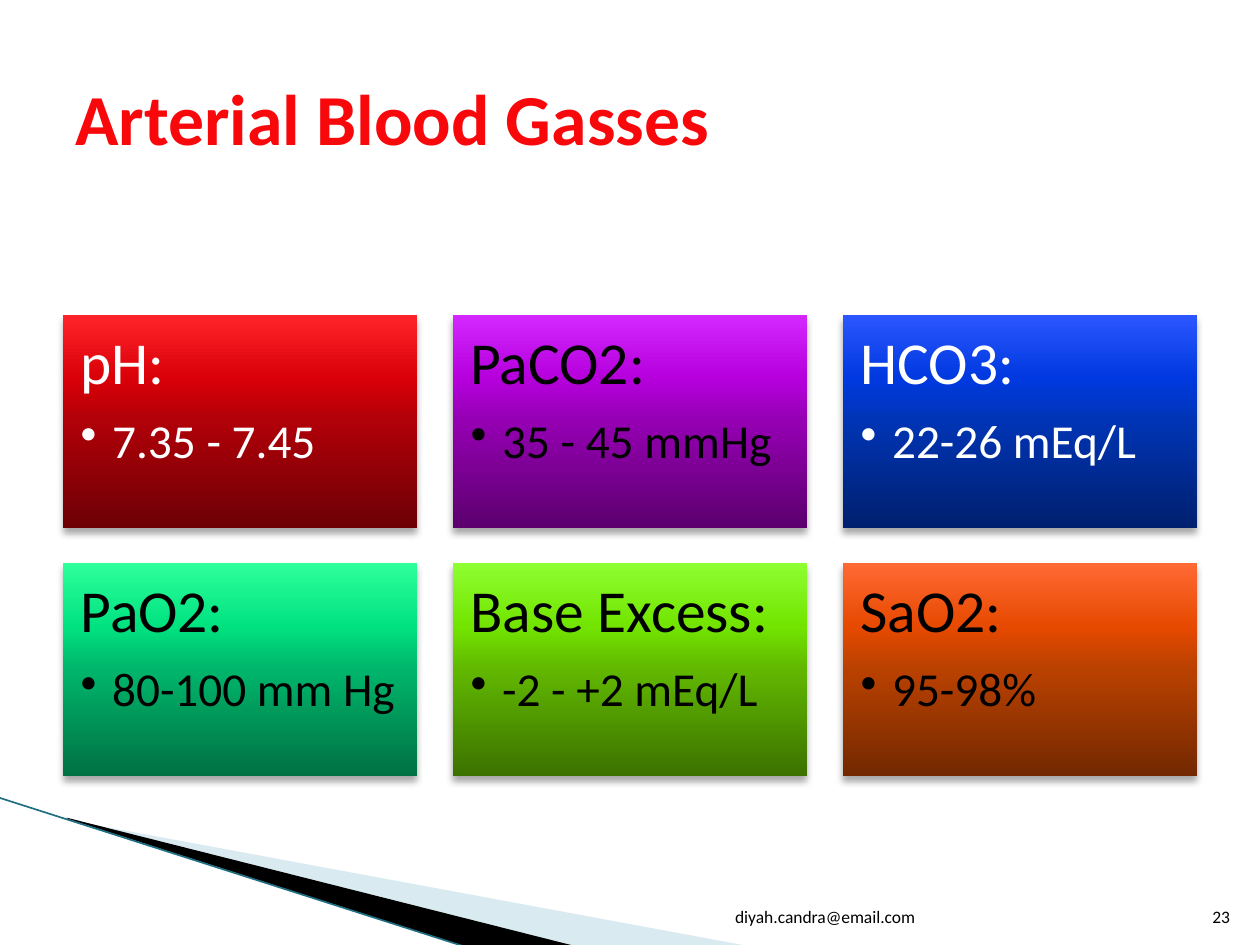
import dataclasses

import pptx
import pptx.dml.color
import pptx.enum.shapes
import pptx.enum.text
import pptx.oxml
import pptx.oxml.ns
import pptx.util
from pptx.util import Inches, Pt

ALIGN = pptx.enum.text.PP_ALIGN
ANCHOR = pptx.enum.text.MSO_ANCHOR
A_NS = pptx.oxml.ns.nsdecls("a")
FONT = "Calibri"

CARD_W, CARD_H = 2.81, 1.69
LEFT, TOP = 0.5, 2.5
PITCH_X, PITCH_Y = 3.095, 1.97
COLUMNS = 3
STOPS = (0, 50, 70, 100)


@dataclasses.dataclass
class Card:
    heading: str
    value: str
    text_color: str
    shades: tuple[str, str, str, str]  # from the bottom edge to the top


@dataclasses.dataclass
class Label:
    text: str
    left: float
    top: float
    width: float
    height: float
    size: float
    color: str
    bold: bool
    align: ALIGN
    anchor: ANCHOR


@dataclasses.dataclass
class Wedge:
    points: list[tuple[float, float]]
    color: str
    opacity: int


CARDS = [
    Card("pH:", "7.35 - 7.45", "FFFFFF", ("6D0005", "B00008", "DA0008", "FF2429")),
    Card("PaCO2:", "35 - 45 mmHg", "000000", ("5C006E", "9400B2", "B500DC", "D427FF")),
    Card("HCO3:", "22-26 mEq/L", "FFFFFF", ("00206F", "0034B4", "0039DF", "2B56FF")),
    Card("PaO2:", "80-100 mm Hg", "000000", ("007143", "00B56B", "00E280", "2EFF9B")),
    Card("Base Excess:", "-2 - +2 mEq/L", "000000", ("3C7200", "61B700", "72E400", "8EFF30")),
    Card("SaO2:", "95-98%", "000000", ("732800", "B94100", "E64900", "FF6933")),
]

LABELS = [
    Label("Arterial Blood Gasses", 0.5, 0.3, 9, 1.25, 41, "F8070B", True,
          ALIGN.LEFT, ANCHOR.MIDDLE),
    Label("diyah.candra@email.com", 4.79, 7.01, 2.57, 0.4, 10, "000000", False,
          ALIGN.RIGHT, ANCHOR.BOTTOM),
    Label("23", 9.46, 7.01, 0.4, 0.4, 10, "000000", False, ALIGN.RIGHT, ANCHOR.BOTTOM),
]

WEDGES = [
    Wedge([(0.55, 6.51), (5.95, 7.51), (4.56, 7.51), (0.55, 6.5)], "A0CBDC", 40),
    Wedge([(0.53, 6.49), (4.57, 7.51), (3.72, 7.52), (0.54, 6.5)], "000000", 100),
]


def rgb(color: str) -> pptx.dml.color.RGBColor:
    return pptx.dml.color.RGBColor.from_string(color)


def style_runs(p, size: float, color: str, bold: bool = False) -> None:
    for r in p.runs:
        r.font.name = FONT
        r.font.size = Pt(size)
        r.font.bold = bold
        r.font.color.rgb = rgb(color)


def add_wedge(s, wedge: Wedge) -> None:
    start, *rest = [(Inches(x), Inches(y)) for x, y in wedge.points]
    builder = s.shapes.build_freeform(*start)
    builder.add_line_segments(rest, close=True)
    sp = builder.convert_to_shape()
    sp.shadow.inherit = False
    sp.line.fill.background()
    sp.fill.solid()
    sp.fill.fore_color.rgb = rgb(wedge.color)
    if wedge.opacity < 100:
        clr = sp.fill._xPr.find(".//" + pptx.oxml.ns.qn("a:srgbClr"))
        clr.append(pptx.oxml.parse_xml(f'<a:alpha {A_NS} val="{wedge.opacity * 1000}"/>'))


def add_edge_line(s) -> None:
    line = s.shapes.add_connector(
        pptx.enum.shapes.MSO_CONNECTOR.STRAIGHT,
        Inches(-0.01), Inches(6.33), Inches(3.71), Inches(7.52))
    line.line.color.rgb = rgb("1F6F83")
    line.line.width = Pt(0.95)
    line._element.spPr.append(pptx.oxml.parse_xml(f"<a:effectLst {A_NS}/>"))


def add_label(s, label: Label) -> None:
    box = s.shapes.add_textbox(Inches(label.left), Inches(label.top),
                               Inches(label.width), Inches(label.height))
    tf = box.text_frame
    tf.word_wrap = True
    tf.vertical_anchor = label.anchor
    tf.text = label.text
    p = tf.paragraphs[0]
    p.alignment = label.align
    style_runs(p, label.size, label.color, label.bold)


def set_gradient_and_shadow(sp, shades: tuple[str, ...]) -> None:
    """Fill the shape from bottom to top and give it a soft shadow below."""
    stops = "".join(f'<a:gs pos="{pos * 1000}"><a:srgbClr val="{color}"/></a:gs>'
                    for pos, color in zip(STOPS, shades))
    sp.line.fill.background()
    spPr = sp._element.spPr
    spPr.find(pptx.oxml.ns.qn("a:ln")).addprevious(pptx.oxml.parse_xml(
        f'<a:gradFill {A_NS} rotWithShape="1"><a:gsLst>{stops}</a:gsLst>'
        '<a:lin ang="16200000" scaled="0"/></a:gradFill>'))
    sp.shadow.inherit = False
    spPr.find(pptx.oxml.ns.qn("a:effectLst")).append(pptx.oxml.parse_xml(
        f'<a:outerShdw {A_NS} blurRad="{Pt(4)}" dist="{Pt(3)}" dir="5400000" '
        'rotWithShape="0"><a:srgbClr val="000000"><a:alpha val="35000"/>'
        '</a:srgbClr></a:outerShdw>'))


def add_card(s, card: Card, left: float, top: float) -> None:
    sp = s.shapes.add_shape(pptx.enum.shapes.MSO_SHAPE.RECTANGLE, Inches(left),
                            Inches(top), Inches(CARD_W), Inches(CARD_H))
    set_gradient_and_shadow(sp, card.shades)
    tf = sp.text_frame
    tf.word_wrap = True
    tf.vertical_anchor = ANCHOR.TOP
    tf.margin_left = tf.margin_right = tf.margin_top = tf.margin_bottom = Inches(0.14)
    tf.text = f"{card.heading}\n{card.value}"
    for p, size, space in zip(tf.paragraphs, (34, 27), (12, 4)):
        p.alignment = ALIGN.LEFT
        p.line_spacing = 0.9
        p.space_after = Pt(space)
        style_runs(p, size, card.text_color)
    bullet = tf.paragraphs[1]
    bullet.level = 1
    pPr = bullet._p.get_or_add_pPr()
    pPr.set("marL", str(Inches(0.25)))
    pPr.set("indent", str(Inches(-0.25)))
    pPr.append(pptx.oxml.parse_xml(f'<a:buChar {A_NS} char="•"/>'))


def main() -> None:
    prs = pptx.Presentation()
    prs.slide_width, prs.slide_height = Inches(10), Inches(7.5)
    s = prs.slides.add_slide(prs.slide_layouts[6])
    for wedge in WEDGES:
        add_wedge(s, wedge)
    add_edge_line(s)
    for i, card in enumerate(CARDS):
        row, col = divmod(i, COLUMNS)
        add_card(s, card, LEFT + col * PITCH_X, TOP + row * PITCH_Y)
    for label in LABELS:
        add_label(s, label)
    prs.save("out.pptx")


if __name__ == "__main__":
    main()
